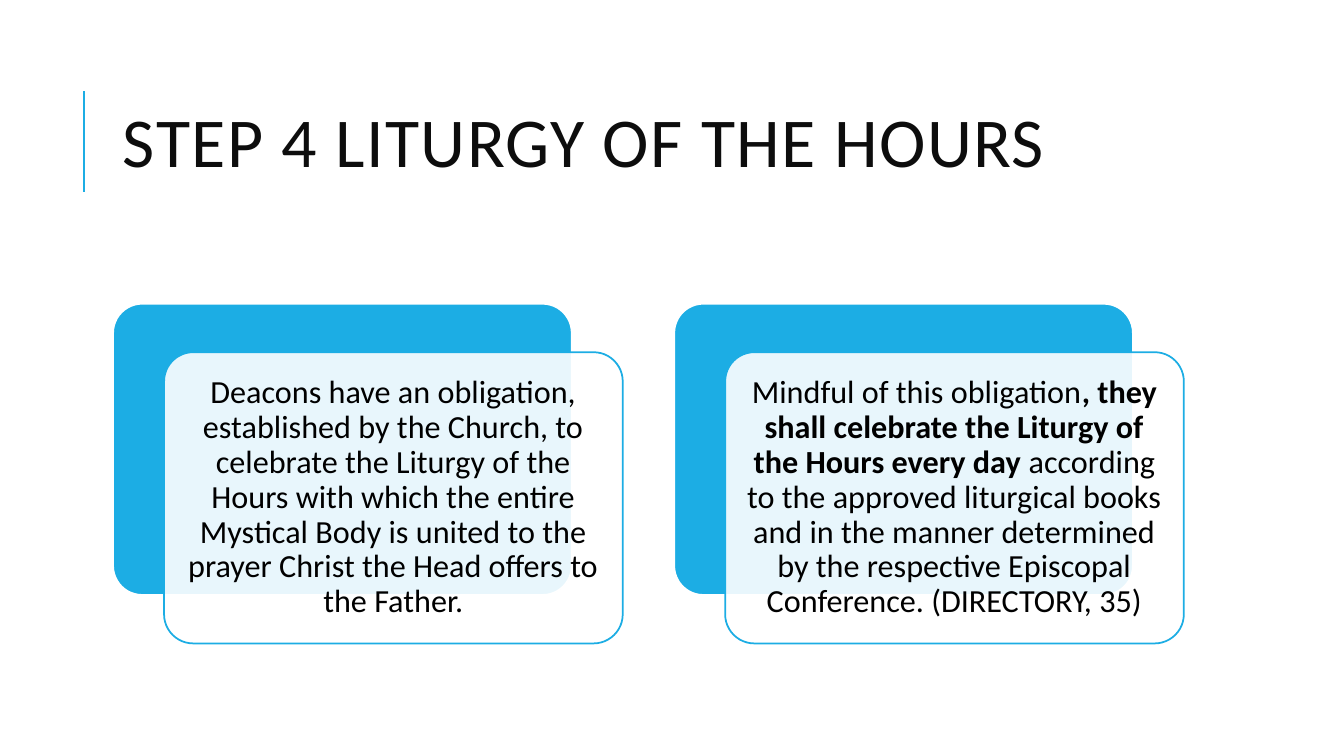
from lxml.etree import SubElement as Sub
from pptx import Presentation
from pptx.dml.color import RGBColor as Rgb
from pptx.enum.shapes import MSO_CONNECTOR as Conn, MSO_SHAPE as Kind
from pptx.enum.text import MSO_ANCHOR as Anchor, PP_ALIGN as Align
from pptx.oxml.ns import qn
from pptx.util import Pt

BLUE, WHITE, BLACK, INK = "1CADE4", "FFFFFF", "000000", "0D0D0D"
CARDS = [
    [("Deacons have an obligation, established by the Church, to celebrate "
      "the Liturgy of the Hours with which the entire Mystical Body is united "
      "to the prayer Christ the Head offers to the Father.", False)],
    [("Mindful of this obligation", False),
     (", they shall celebrate the Liturgy of the Hours every day", True),
     (" according to the approved liturgical books and in the manner "
      "determined by the respective Episcopal Conference. (DIRECTORY, 35)",
      False)],
]


def paint(item, tint):
    """Give a fill, line or font one solid colour."""
    color = item.color if hasattr(item, "color") else item.fore_color
    color.rgb = Rgb.from_string(tint)


def style(par, size, tint, space):
    """Set the font and line spacing of a paragraph."""
    par.font.name, par.font.size = "Calibri", Pt(size)
    paint(par.font, tint)
    par.line_spacing = space


def header(slide, left, top, width, height):
    """Draw the title and the thin rule to its left."""
    rule = slide.shapes.add_connector(
        Conn.STRAIGHT, Pt(left - 21), Pt(top + 91), Pt(left - 21), Pt(top + 19))
    paint(rule.line, BLUE)
    rule.line.width = Pt(1.5)
    Sub(rule._element.spPr, qn("a:effectLst"))
    box = slide.shapes.add_textbox(Pt(left), Pt(top), Pt(width), Pt(height))
    frame = box.text_frame
    frame.word_wrap = True
    frame.vertical_anchor = Anchor.MIDDLE
    par = frame.paragraphs[0]
    run = par.add_run()
    run.text = "STEP 4 LITURGY OF THE HOURS"
    run.font._element.set("spc", "100")
    style(par, 50, INK, 0.8)


def panel(slide, left, top, width, height, fill, line):
    """Draw one rounded rectangle and return it."""
    shape = slide.shapes.add_shape(
        Kind.ROUNDED_RECTANGLE, Pt(left), Pt(top), Pt(width), Pt(height))
    shape.adjustments[0] = 0.1
    shape.shadow.inherit = False
    shape.fill.solid()
    paint(shape.fill, fill)
    paint(shape.line, line)
    shape.line.width = Pt(1.25)
    return shape


def card(slide, left, top, width, height, runs):
    """Draw a blue panel with a translucent text panel offset over it."""
    panel(slide, left, top, width, height, BLUE, WHITE)
    front = panel(slide, left + 36.4, top + 34.6, width, height, WHITE, BLUE)
    tone = front._element.spPr.find(qn("a:solidFill"))[0]
    Sub(tone, qn("a:alpha"), val="90000")
    frame = front.text_frame
    frame.word_wrap = True
    frame.vertical_anchor = Anchor.MIDDLE
    frame.margin_left = frame.margin_right = Pt(7)
    frame.margin_top = frame.margin_bottom = Pt(7)
    par = frame.paragraphs[0]
    par.alignment = Align.CENTER
    style(par, 23, BLACK, 0.9)
    for text, bold in runs:
        run = par.add_run()
        run.text, run.font.bold = text, bold


def main():
    """Build the slide and save it."""
    deck = Presentation()
    deck.slide_width, deck.slide_height = Pt(960), Pt(540)
    slide = deck.slides.add_slide(deck.slide_layouts[6])
    header(slide, 80.8, 46, 765, 118)
    for i, runs in enumerate(CARDS):
        card(slide, 80.8 + i * 400.8, 217, 327.6, 208, runs)
    deck.save("out.pptx")


if __name__ == "__main__":
    main()
